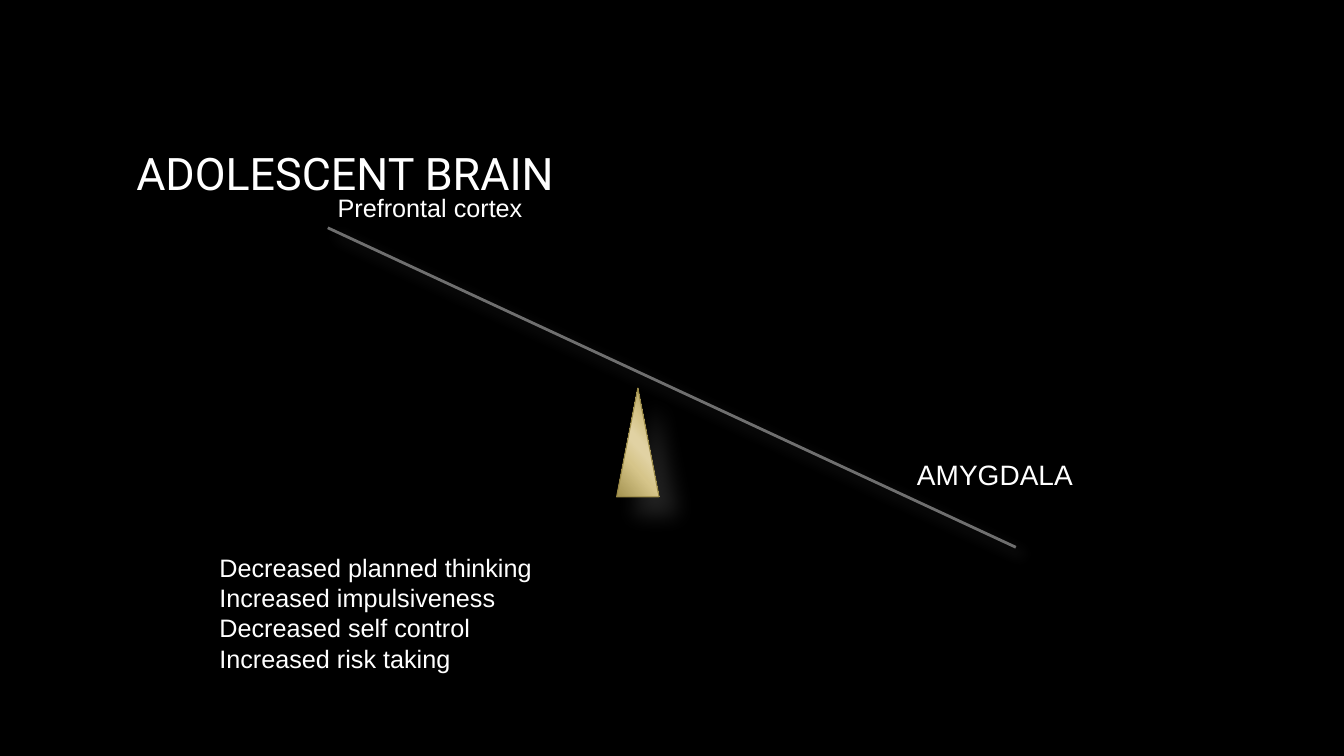
import lxml.etree
import pptx
import pptx.dml.color
import pptx.enum.shapes
import pptx.enum.text
import pptx.oxml
import pptx.oxml.ns
import pptx.util

Cm = pptx.util.Cm
Pt = pptx.util.Pt

COLORS = {
    "background": "000000",
    "text": "FFFFFF",
    "beam": "6F6F6F",
    "pivot_line": "988744",
    "shadow": "808080",
}
TITLE = {"text": "ADOLESCENT BRAIN", "box": (3.18, 1.7, 27.51, 5.28), "size": 32, "font": "Roboto"}
LABELS = [
    {"text": "Prefrontal cortex", "box": (8.26, 4.72, 5.21, 1.02), "size": 18},
    {"text": "AMYGDALA", "box": (22.86, 11.4, 4.55, 1.12), "size": 20},
    {
        "text": "Decreased planned thinking\nIncreased impulsiveness\n"
        "Decreased self control\nIncreased risk taking",
        "box": (5.28, 13.79, 8.46, 3.33),
        "size": 18,
    },
]
BEAM = {"ends": (8.26, 5.74, 25.6, 13.79), "shadow": (35, 10.2, 8)}
PIVOT = {"box": (15.54, 9.78, 1.07, 2.74), "shadow": (25, 15, 18)}
PIVOT_STOPS = [
    (0, "A49350"), (32, "D6C58A"), (47, "E1D2A3"),
    (53, "E1D2A3"), (67, "D5C489"), (100, "A49350"),
]
PIVOT_ANGLE = 319
SHADOW_ANGLE = 45
DEGREE = 60000
PERCENT = 1000


def lengths(values):
    return [Cm(value) for value in values]


def color(name):
    return pptx.dml.color.RGBColor.from_string(COLORS[name])


def add_child(parent, tag, **attributes):
    child = lxml.etree.SubElement(parent, pptx.oxml.ns.qn(tag))
    for name, value in attributes.items():
        child.set(name, str(value))
    return child


def add_shadow(shape, opacity, blur, distance):
    effects = add_child(shape._element.spPr, "a:effectLst")
    shadow = add_child(
        effects, "a:outerShdw", blurRad=int(Pt(blur)), dist=int(Pt(distance)),
        dir=SHADOW_ANGLE * DEGREE, algn="ctr", rotWithShape=0,
    )
    shade = add_child(shadow, "a:srgbClr", val=COLORS["shadow"])
    add_child(shade, "a:alpha", val=opacity * PERCENT)


def set_gradient(shape, stops, angle):
    shape.fill.gradient()
    gradient = shape._element.spPr.find(pptx.oxml.ns.qn("a:gradFill"))
    for child in list(gradient):
        gradient.remove(child)
    stop_list = add_child(gradient, "a:gsLst")
    for position, value in stops:
        stop = add_child(stop_list, "a:gs", pos=position * PERCENT)
        add_child(stop, "a:srgbClr", val=value)
    add_child(gradient, "a:lin", ang=angle * DEGREE, scaled=0)


def write_text(shape, text, size, font):
    shape.text_frame.text = text
    for paragraph in shape.text_frame.paragraphs:
        paragraph.alignment = pptx.enum.text.PP_ALIGN.LEFT
        for run in paragraph.runs:
            run.font.size = Pt(size)
            run.font.name = font
            run.font.color.rgb = color("text")


def main():
    presentation = pptx.Presentation()
    presentation.slide_width = Cm(33.87)
    presentation.slide_height = Cm(19.05)
    slide = presentation.slides.add_slide(presentation.slide_layouts[5])
    slide.background.fill.solid()
    slide.background.fill.fore_color.rgb = color("background")

    title = slide.shapes.title
    title.left, title.top, title.width, title.height = lengths(TITLE["box"])
    write_text(title, TITLE["text"], TITLE["size"], TITLE["font"])
    title.text_frame.vertical_anchor = pptx.enum.text.MSO_ANCHOR.MIDDLE

    beam = slide.shapes.add_connector(
        pptx.enum.shapes.MSO_CONNECTOR.STRAIGHT, *lengths(BEAM["ends"])
    )
    beam.line.color.rgb = color("beam")
    beam.line.width = Pt(2)
    add_shadow(beam, *BEAM["shadow"])

    pivot = slide.shapes.add_shape(
        pptx.enum.shapes.MSO_SHAPE.ISOSCELES_TRIANGLE, *lengths(PIVOT["box"])
    )
    set_gradient(pivot, PIVOT_STOPS, PIVOT_ANGLE)
    pivot.line.color.rgb = color("pivot_line")
    pivot.line.width = Pt(0.75)
    add_shadow(pivot, *PIVOT["shadow"])

    for label in LABELS:
        box = slide.shapes.add_textbox(*lengths(label["box"]))
        box.text_frame.word_wrap = False
        box.text_frame.auto_size = pptx.enum.text.MSO_AUTO_SIZE.SHAPE_TO_FIT_TEXT
        write_text(box, label["text"], label["size"], "Arial")

    presentation.save("out.pptx")


if __name__ == "__main__":
    main()
